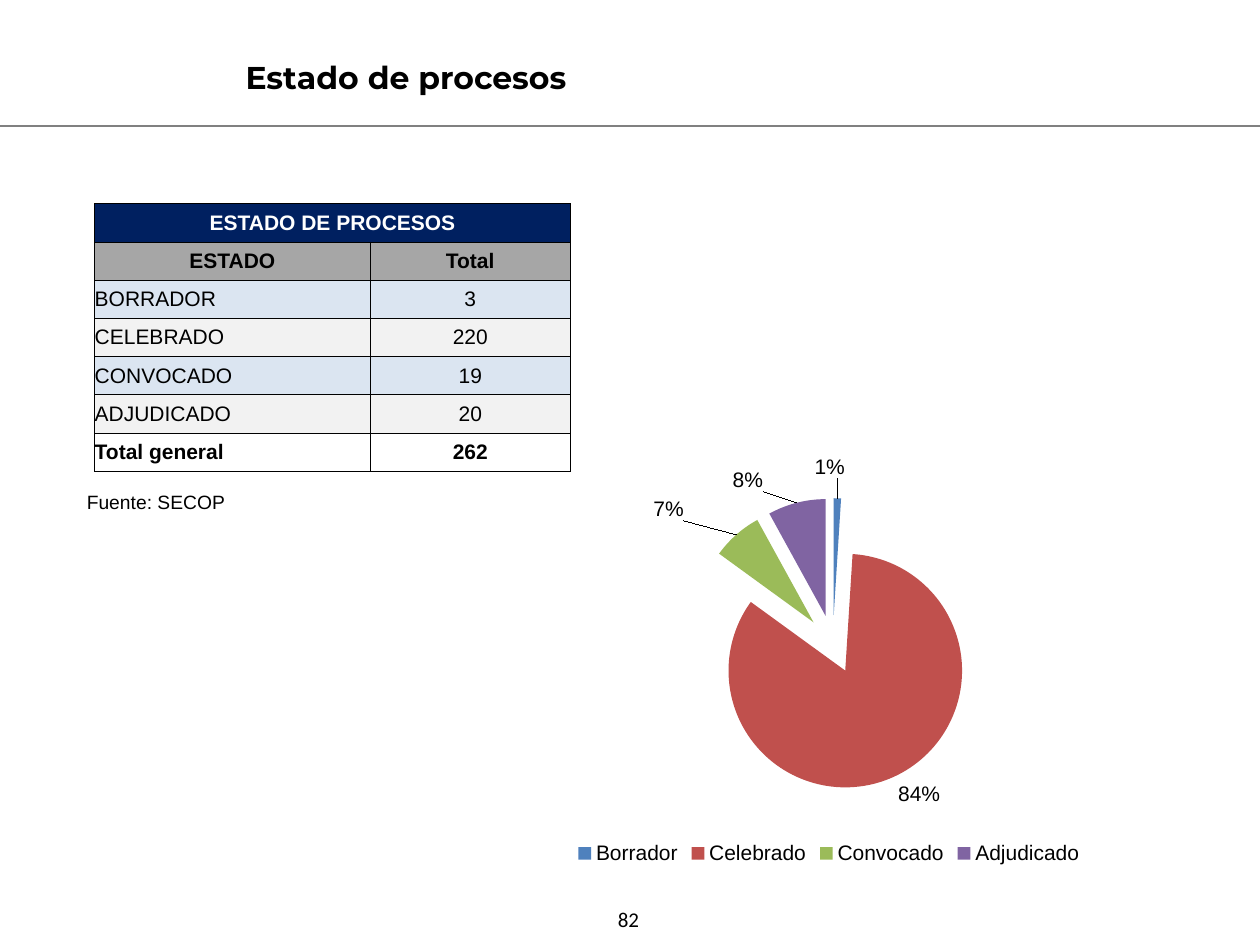
from pptx import Presentation
from pptx.chart.data import CategoryChartData
from pptx.dml.color import RGBColor
from pptx.enum.chart import XL_CHART_TYPE as ChartType, XL_LABEL_POSITION as LabelPos, XL_LEGEND_POSITION as LegendPos
from pptx.enum.shapes import MSO_CONNECTOR as Connector
from pptx.enum.text import MSO_ANCHOR as Anchor, PP_ALIGN as Align
from pptx.oxml import parse_xml
from pptx.oxml.ns import nsdecls, qn
from pptx.util import Cm, Pt
from lxml.etree import SubElement

BLACK = RGBColor(0x00, 0x00, 0x00)
WHITE = RGBColor(0xFF, 0xFF, 0xFF)
RULE_GREY = RGBColor(0x80, 0x80, 0x80)
NAVY = RGBColor(0x00, 0x20, 0x60)
HEAD_GREY = RGBColor(0xA6, 0xA6, 0xA6)
PALE_BLUE = RGBColor(0xDB, 0xE5, 0xF1)
PALE_GREY = RGBColor(0xF2, 0xF2, 0xF2)
SLICES = [
    RGBColor(0x4F, 0x81, 0xBD),
    RGBColor(0xC0, 0x50, 0x4D),
    RGBColor(0x9B, 0xBB, 0x59),
    RGBColor(0x80, 0x64, 0xA2),
]


def write(frame, text, font, size, color=BLACK, bold=False, align=Align.LEFT):
    para = frame.paragraphs[0]
    para.alignment = align
    span = para.add_run()
    span.text = text
    span.font.name = font
    span.font.size = Pt(size)
    span.font.bold = bold
    span.font.color.rgb = color


def outline_cell(cell):
    props = cell._tc.get_or_add_tcPr()
    for index, side in enumerate(("lnL", "lnR", "lnT", "lnB")):
        props.insert(index, parse_xml(
            f'<a:{side} {nsdecls("a")} w="6350"><a:solidFill>'
            f'<a:srgbClr val="{BLACK}"/></a:solidFill></a:{side}>'))


deck = Presentation()
deck.slide_width = Cm(25.4)
deck.slide_height = Cm(19.05)
page = deck.slides.add_slide(deck.slide_layouts[6])

rule = page.shapes.add_connector(Connector.STRAIGHT, 0, Cm(2.54), Cm(25.4), Cm(2.54))
rule.line.color.rgb = RULE_GREY
rule.line.width = Pt(0.75)
SubElement(rule._element.spPr, qn("a:effectLst"))

for text, left, top, width, height, font, size, bold, align, anchor in [
    ("Estado de procesos", 4.7, 0.99, 12.8, 1.12, "Montserrat", 18, True, Align.LEFT, Anchor.MIDDLE),
    ("Fuente: SECOP", 1.5, 9.75, 7.11, 0.74, "Arial", 11, False, Align.LEFT, Anchor.TOP),
    ("82", 12.01, 17.96, 1.32, 1.12, "Calibri", 12, False, Align.CENTER, Anchor.MIDDLE),
]:
    box = page.shapes.add_textbox(Cm(left), Cm(top), Cm(width), Cm(height))
    box.text_frame.word_wrap = True
    box.text_frame.vertical_anchor = anchor
    write(box.text_frame, text, font, size, bold=bold, align=align)

rows = [
    ("ESTADO DE PROCESOS", "", NAVY),
    ("ESTADO", "Total", HEAD_GREY),
    ("BORRADOR", "3", PALE_BLUE),
    ("CELEBRADO", "220", PALE_GREY),
    ("CONVOCADO", "19", PALE_BLUE),
    ("ADJUDICADO", "20", PALE_GREY),
    ("Total general", "262", WHITE),
]
table = page.shapes.add_table(len(rows), 2, Cm(1.91), Cm(4.11), Cm(9.59), Cm(5.39)).table
table.horz_banding = False
table.columns[0].width = Cm(5.55)
table.columns[1].width = Cm(4.04)
table.cell(0, 0).merge(table.cell(0, 1))
for r, (state, total, fill) in enumerate(rows):
    table.rows[r].height = Cm(0.77)
    for c, text in enumerate((state, total)):
        cell = table.cell(r, c)
        cell.margin_left = cell.margin_right = cell.margin_top = cell.margin_bottom = 0
        cell.vertical_anchor = Anchor.MIDDLE
        cell.fill.solid()
        cell.fill.fore_color.rgb = fill
        outline_cell(cell)
        if text:
            write(cell.text_frame, text, "Arial", 12,
                  color=WHITE if r == 0 else BLACK,
                  bold=r in (0, 1, len(rows) - 1),
                  align=Align.CENTER if r < 2 or c == 1 else Align.LEFT)

data = CategoryChartData()
data.categories = ["Borrador", "Celebrado", "Convocado", "Adjudicado"]
data.add_series("Series 1", (1, 84, 7, 8))
chart = page.shapes.add_chart(ChartType.PIE, Cm(8.71), Cm(9.12), Cm(16), Cm(8.41), data).chart
chart.has_title = False
chart.font.name = "Arial"
chart.font.size = Pt(12)
chart.font.color.rgb = BLACK
chart.has_legend = True
chart.legend.position = LegendPos.BOTTOM
chart.legend.include_in_layout = False

plot = chart.plots[0]
plot.vary_by_categories = True
pie = plot.series[0]
for index, color in enumerate(SLICES):
    slice_fill = pie.points[index].format.fill
    slice_fill.solid()
    slice_fill.fore_color.rgb = color
pie._element.find(qn("c:dPt")).addprevious(
    parse_xml(f'<c:explosion {nsdecls("c")} val="25"/>'))

labels = pie.data_labels
labels.show_value = False
labels.show_percentage = True
labels.number_format = "0%"
labels.number_format_is_linked = False
labels.position = LabelPos.OUTSIDE_END
for order, (index, dx, dy) in enumerate([(0, -0.01, -0.03), (2, -0.06, -0.02), (3, -0.04, -0.01)]):
    labels._element.insert(order, parse_xml(
        f'<c:dLbl {nsdecls("c")}><c:idx val="{index}"/><c:layout><c:manualLayout>'
        f'<c:x val="{dx}"/><c:y val="{dy}"/></c:manualLayout></c:layout>'
        '<c:dLblPos val="outEnd"/><c:showLegendKey val="0"/><c:showVal val="0"/>'
        '<c:showCatName val="0"/><c:showSerName val="0"/><c:showPercent val="1"/>'
        '<c:showBubbleSize val="0"/></c:dLbl>'))

plot_area = chart._chartSpace.chart.plotArea
for old_layout in plot_area.findall(qn("c:layout")):
    plot_area.remove(old_layout)
plot_area.insert(0, parse_xml(
    f'<c:layout {nsdecls("c")}><c:manualLayout><c:layoutTarget val="inner"/>'
    '<c:xMode val="edge"/><c:yMode val="edge"/><c:x val="0.32"/><c:y val="0.11"/>'
    '<c:w val="0.37"/><c:h val="0.7"/></c:manualLayout></c:layout>'))

deck.save("out.pptx")
